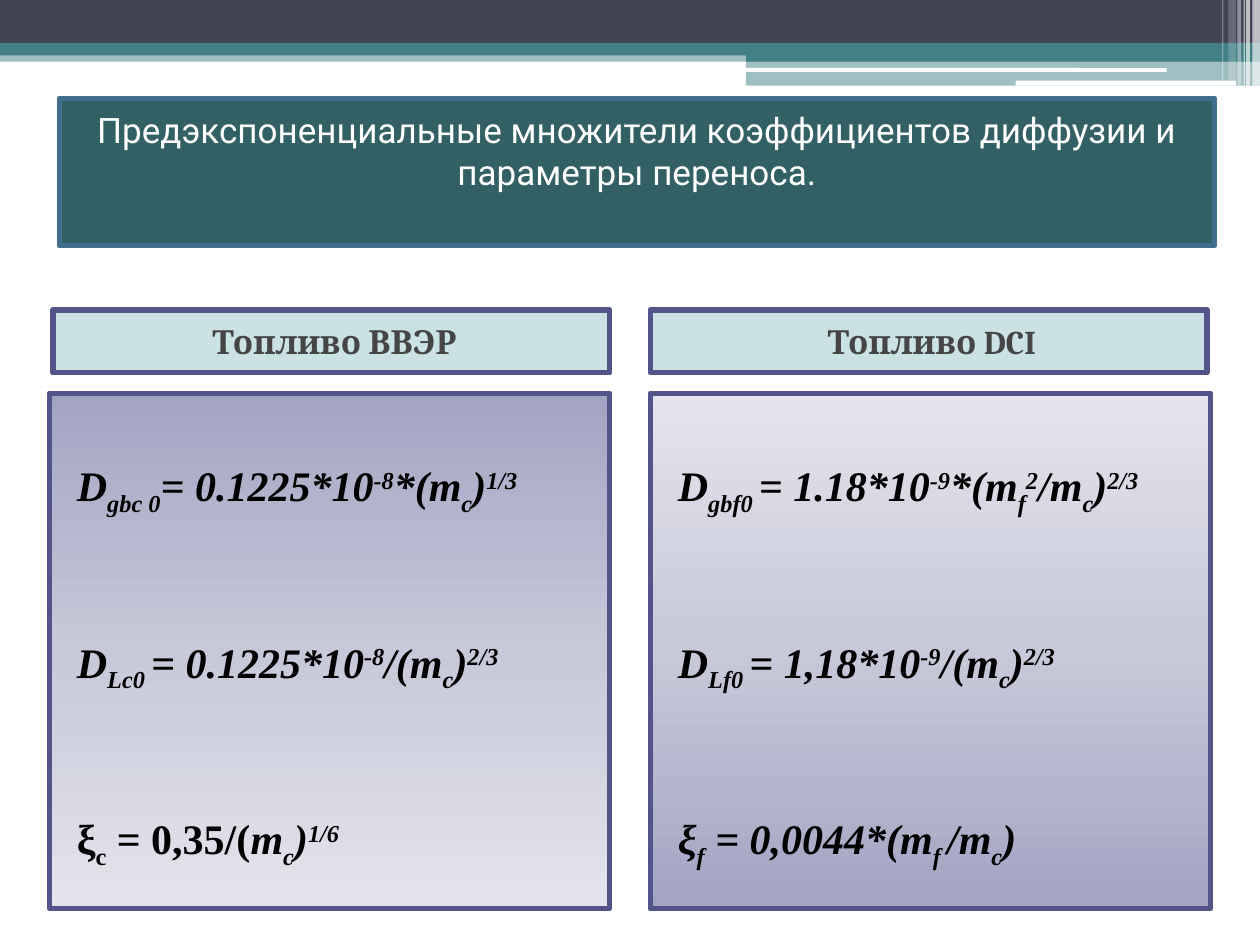
import copy
import pptx
import pptx.util
import pptx.dml.color
import pptx.enum.shapes
import pptx.enum.text
import pptx.oxml

Pt = pptx.util.Pt
KIND = pptx.enum.shapes.MSO_SHAPE
ALIGN = pptx.enum.text.PP_ALIGN
ANCHOR = pptx.enum.text.MSO_ANCHOR
COLS, ROWS = 100, 75
SUB, SUP = -25, 30
COLORS = {
    "dark": "424456", "teal": "438086", "white": "FFFFFF",
    "title": "326065", "rim": "406F8D", "head": "328E97",
    "edge": "53548A", "grey": "454545", "black": "000000",
    "deep": "A3A4C3", "mid": "C7C8D9", "pale": "E4E4EC",
}


def tint(name):
    return pptx.dml.color.RGBColor.from_string(COLORS[name])


class Deck:
    """Style and current slide; lengths are columns and rows of the grid."""

    def __init__(self):
        self.prs = pptx.Presentation()
        self.prs.slide_width = pptx.util.Inches(10)
        self.prs.slide_height = pptx.util.Inches(7.5)
        self.slide = self.prs.slides.add_slide(self.prs.slide_layouts[6])
        self.col = self.prs.slide_width / COLS
        self.row = self.prs.slide_height / ROWS

    def box(self, x, y, w, h, fill=None, alpha=100, line=None, kind=KIND.RECTANGLE):
        shape = self.slide.shapes.add_shape(
            kind, round(x * self.col), round(y * self.row),
            round(w * self.col), round(h * self.row))
        shape.shadow.inherit = False
        if fill:
            shape.fill.solid()
            shape.fill.fore_color.rgb = tint(fill)
            if alpha < 100:
                color = shape._element.spPr.find(".//" + pptx.oxml.ns.qn("a:srgbClr"))
                node = pptx.oxml.parse_xml(
                    f'<a:alpha {pptx.oxml.ns.nsdecls("a")} val="{alpha * 1000}"/>')
                color.append(node)
        if line:
            shape.line.color.rgb = tint(line)
            shape.line.width = Pt(3)
        else:
            shape.line.fill.background()
        return shape

    def blend(self, shape, names, angle):
        shape.fill.gradient()
        shape.fill.gradient_angle = angle
        stops = shape._element.spPr.find(".//" + pptx.oxml.ns.qn("a:gsLst"))
        stops.insert(1, copy.deepcopy(stops[0]))
        for i, stop in enumerate(shape.fill.gradient_stops):
            stop.position = i / 2
            stop.color.rgb = tint(names[i])

    def run(self, para, text, font, size, color, bold=False, slant=False, shift=0):
        run = para.add_run()
        run.text = text
        run.font.name = font
        run.font.size = Pt(size)
        run.font.bold = bold
        run.font.italic = slant
        run.font.color.rgb = tint(color)
        if shift:
            run._r.get_or_add_rPr().set("baseline", str(shift * 1000))

    def label(self, shape, text, font, size, color, bold=False):
        frame = shape.text_frame
        frame.word_wrap = True
        frame.vertical_anchor = ANCHOR.MIDDLE
        para = frame.paragraphs[0]
        para.alignment = ALIGN.CENTER
        self.run(para, text, font, size, color, bold)

    def panel(self, x, angle, rows):
        shape = self.box(x, 31.2, 44.5, 40.9, line="edge")
        self.blend(shape, ("deep", "mid", "pale"), angle)
        frame = shape.text_frame
        frame.word_wrap = True
        frame.vertical_anchor = ANCHOR.TOP
        frame.margin_left = round(2.2 * self.col)
        frame.margin_top = round(5.3 * self.row)
        for i, row in enumerate(rows):
            para = frame.add_paragraph() if i else frame.paragraphs[0]
            para.alignment = ALIGN.LEFT
            para.space_before = Pt(68 if i else 0)
            for text, shift, slant in row:
                self.run(para, text, "Times New Roman", 24, "black", True, slant, shift)


def terms(*parts, plain=0):
    """Runs of a formula; the first `plain` ones are upright."""
    pairs = [(part, 0) if isinstance(part, str) else part for part in parts]
    return [(text, shift, i >= plain) for i, (text, shift) in enumerate(pairs)]


def main():
    deck = Deck()

    # Header bands
    for band in [
        (0, 4, 100, 0.9, "teal", 50),
        (0, 0, 100, 3.4, "dark"),
        (0, 3.4, 100, 1, "teal"),
        (59.2, 3.9, 40.8, 1, "teal"),
        (59.2, 4.8, 40.8, 2, "teal", 50),
    ]:
        deck.box(*band)
    for x, y, w, h in [(59.1, 5.4, 33.5, 0.3), (80.6, 6.4, 17.5, 0.4)]:
        deck.box(x, y, w, h, "white", kind=KIND.ROUNDED_RECTANGLE)

    # Pale stripes in the corner
    for x, w, h, alpha in [
        (99.4, 0.6, 6.8, 65), (98.9, 0.3, 6.8, 65), (98.7, 0.1, 6.8, 60),
        (98.2, 0.3, 6.8, 40), (97.5, 0.6, 6.4, 20), (97, 0.1, 6.4, 30),
    ]:
        deck.box(x, 0, w, h, "white", alpha)

    # Column heads
    for x, text in [(4.2, "Топливо ВВЭР"), (51.6, "Топливо DCI")]:
        head = deck.box(x, 24.6, 44.2, 5, "head", 25, "edge")
        head.text_frame.margin_left = round(1.5 * deck.col)
        deck.label(head, text, "Cambria", 19, "grey", True)

    # Formulas
    c = ("c", SUB)
    third = ("2/3", SUP)
    deck.panel(3.9, 270, [
        terms("D", ("gbc 0", SUB), "= 0.1225*10", ("-8", SUP), "*(m", c, ")", ("1/3", SUP)),
        terms("D", ("Lc0 ", SUB), "= 0.1225*10", ("-8", SUP), "/(m", c, ")", third),
        terms("ξ", ("с", SUB), " = 0,35/(", "m", c, ")", ("1/6", SUP), plain=3),
    ])
    deck.panel(51.6, 90, [
        terms("D", ("gbf0 ", SUB), "= 1.18*10", ("-9", SUP), "*(m", ("f", SUB),
              ("2", SUP), "/m", c, ")", third),
        terms("D", ("Lf0 ", SUB), "= 1,18*10", ("-9", SUP), "/(m", c, ")", third),
        terms("ξ", ("f", SUB), " = 0,0044*(m", ("f ", SUB), "/m", c, ")"),
    ])

    # Title
    title = deck.box(4.7, 7.8, 91.7, 11.7, "title", line="rim")
    title.text_frame.margin_bottom = round(3.9 * deck.row)
    deck.label(title, "Предэкспоненциальные множители коэффициентов диффузии и "
               "параметры переноса.", "Roboto", 20, "white")

    deck.prs.save("out.pptx")


if __name__ == "__main__":
    main()
